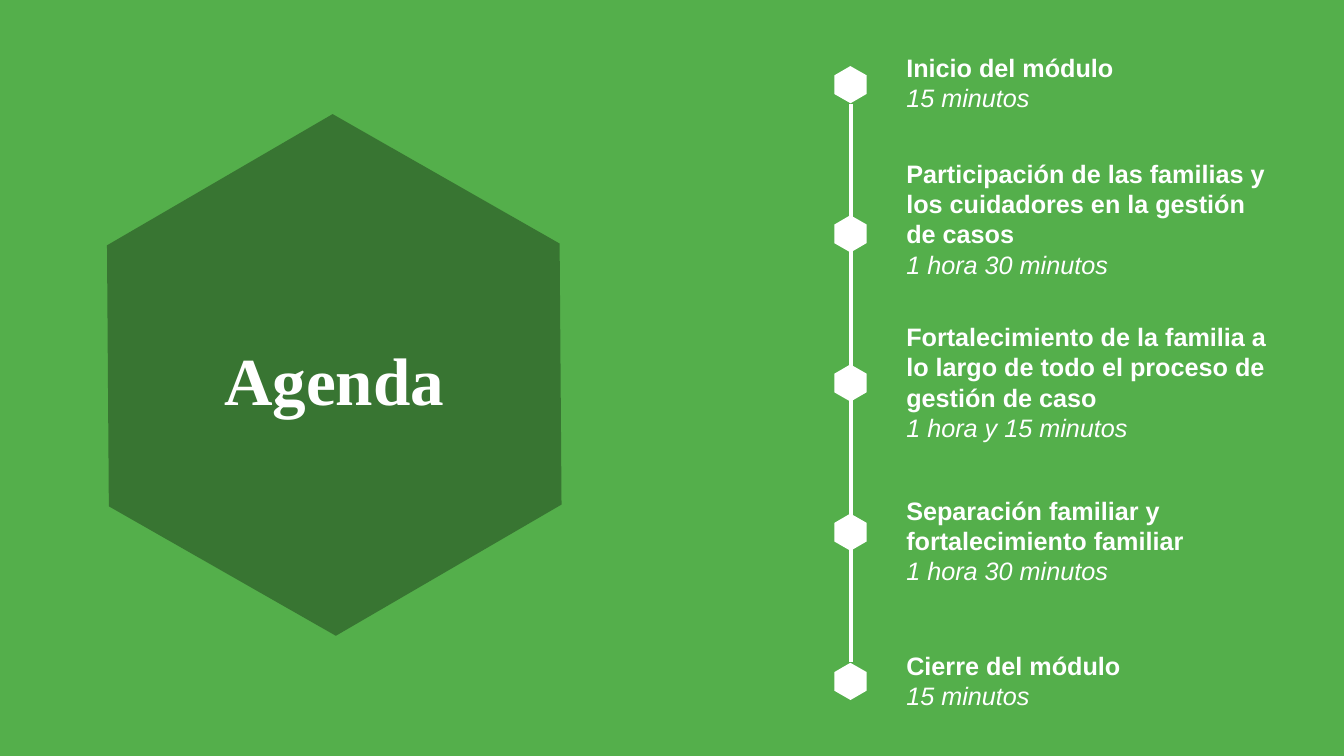
from lxml import etree
from pptx import Presentation
from pptx.dml.color import RGBColor
from pptx.enum.shapes import MSO_CONNECTOR as Link, MSO_SHAPE as Shape
from pptx.enum.text import MSO_ANCHOR as Anchor, PP_ALIGN as Align
from pptx.oxml.ns import qn
from pptx.util import Inches, Pt

TITLE = "Agenda"
STEPS = [
    ("Inicio del módulo", "15 minutos", 0.47, 0.71),
    ("Participación de las familias y los cuidadores en la gestión de casos",
     "1 hora 30 minutos", 1.52, 1.31),
    ("Fortalecimiento de la familia a lo largo de todo el proceso de gestión de caso",
     "1 hora y 15 minutos", 3.14, 1.31),
    ("Separación familiar y fortalecimiento familiar",
     "1 hora 30 minutos", 4.86, 1.01),
    ("Cierre del módulo", "15 minutos", 6.4, 0.71),
]
GREEN = RGBColor(0x54, 0xAF, 0x4B)
DARK = RGBColor(0x38, 0x75, 0x32)
WHITE = RGBColor(0xFF, 0xFF, 0xFF)
FIRST, PITCH = 0.68, 1.48


def add_hex(slide, x, y, w, h, color):
    mark = slide.shapes.add_shape(
        Shape.HEXAGON, Inches(x), Inches(y), Inches(w), Inches(h))
    mark.adjustments[0] = 0.29
    mark.rotation = 29.7
    mark.shadow.inherit = False
    mark.fill.solid()
    mark.fill.fore_color.rgb = color
    mark.line.fill.background()


def add_box(slide, x, y, w, h):
    box = slide.shapes.add_textbox(Inches(x), Inches(y), Inches(w), Inches(h))
    box.text_frame.word_wrap = True
    return box.text_frame


def add_run(para, text, size, face, bold=False, italic=False):
    run = para.add_run()
    run.text = text
    font = run.font
    font.name, font.size = face, Pt(size)
    font.bold, font.italic = bold, italic
    font.color.rgb = WHITE


def main():
    deck = Presentation()
    deck.slide_width, deck.slide_height = Inches(13.33), Inches(7.5)
    slide = deck.slides.add_slide(deck.slide_layouts[6])
    slide.background.fill.solid()
    slide.background.fill.fore_color.rgb = GREEN

    add_hex(slide, 0.72, 1.48, 5.19, 4.48, DARK)
    frame = add_box(slide, 1.12, 3.5, 4.39, 0.61)
    frame.vertical_anchor = Anchor.MIDDLE
    head = frame.paragraphs[0]
    head.alignment = Align.CENTER
    head.line_spacing = 0.9
    add_run(head, TITLE, 48, "Times New Roman", bold=True)

    line = slide.shapes.add_connector(
        Link.STRAIGHT, Inches(8.44), Inches(1.03), Inches(8.44), Inches(6.57))
    line.line.color.rgb = WHITE
    line.line.width = Pt(2.25)
    etree.SubElement(line.element.spPr, qn("a:effectLst"))

    for i, (name, time, top, tall) in enumerate(STEPS):
        add_hex(slide, 8.25, FIRST + i * PITCH, 0.37, 0.32, WHITE)
        frame = add_box(slide, 8.89, top, 3.79, tall)
        add_run(frame.paragraphs[0], name, 18, "Arial", bold=True)
        add_run(frame.add_paragraph(), time, 18, "Arial", italic=True)

    deck.save("out.pptx")


if __name__ == "__main__":
    main()
